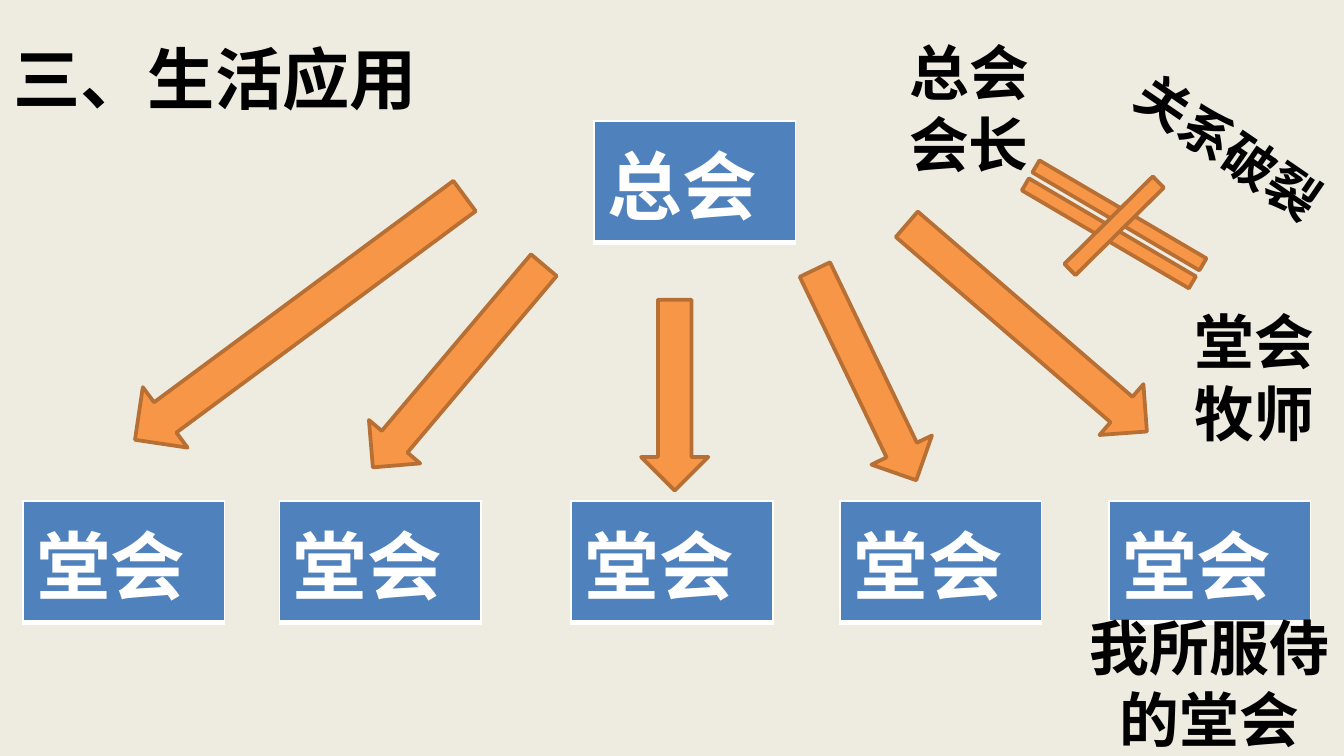
from lxml.etree import SubElement
from pptx import Presentation
from pptx.dml.color import RGBColor
from pptx.enum.shapes import MSO_SHAPE
from pptx.enum.text import MSO_ANCHOR, PP_ALIGN
from pptx.oxml.ns import qn
from pptx.util import Inches, Pt

THEME = {
    "background": RGBColor.from_string("EEECE1"),
    "text": RGBColor.from_string("000000"),
    "light": RGBColor.from_string("FFFFFF"),
    "box": RGBColor.from_string("4F81BD"),
    "arrow": RGBColor.from_string("F79646"),
    "outline": RGBColor.from_string("B76F34"),
    "title_font": "Calibri",
    "cell_font": "Arial",
    "title_size": 36,
    "cell_size": 40,
    "label_size": 32,
    "note_size": 28,
}
TITLE = "三、生活应用"
BOX_SIZE = (1.5, 0.77)
HEADQUARTERS = ("总会", 4.42, 0.9)
BRANCH_NAME, BRANCH_TOP = "堂会", 3.73
BRANCH_LEFTS = (0.17, 2.08, 4.25, 6.25, 8.25)
BORDERS = (("a:lnL", 1), ("a:lnR", 1), ("a:lnT", 1), ("a:lnB", 3))

# left, top, width, height, rotation
ARROWS = (
    (1.95, 0.84, 0.56, 3.05, 233.5),
    (3.16, 1.74, 0.5, 1.97, 220.2),
    (4.77, 2.23, 0.5, 1.42, 180),
    (6.19, 1.92, 0.5, 1.74, 154.3),
    (7.39, 1.26, 0.5, 2.36, 130.8),
)
BROKEN_LINK = (
    (MSO_SHAPE.MATH_EQUAL, (7.31, 1.45, 1.96, 0.44, 30.4)),
    (MSO_SHAPE.MATH_MINUS, (7.66, 1.43, 1.26, 0.5, 315.3)),
)
LABELS = (
    ("我所服侍的堂会", (8, 4.54, 2, 1.08, 0)),
    ("总会会长", (6.5, 0.31, 1.42, 0.98, 0)),
    ("堂会牧师", (8.67, 2.31, 1.33, 0.98, 0)),
)
NOTE = ("关系破裂", (8.19, 0.6, 1.92, 0.98, 34.4))


def write(frame, text, size, font, color, align):
    para = frame.paragraphs[0]
    para.alignment = align
    span = para.add_run()
    span.text = text
    span.font.name = font
    span.font.size = Pt(size)
    span.font.bold = True
    span.font.color.rgb = color


def add_box(page, text, left, top):
    """Add a one-cell table with white borders."""
    width, height = BOX_SIZE
    table = page.shapes.add_table(
        1, 1, Inches(left), Inches(top), Inches(width), Inches(height)).table
    cell = table.cell(0, 0)
    properties = cell._tc.get_or_add_tcPr()
    for tag, points in BORDERS:
        border = SubElement(properties, qn(tag), w=str(Pt(points)))
        fill = SubElement(border, qn("a:solidFill"))
        SubElement(fill, qn("a:srgbClr"), val=str(THEME["light"]))
    cell.fill.solid()
    cell.fill.fore_color.rgb = THEME["box"]
    write(cell.text_frame, text, THEME["cell_size"], THEME["cell_font"],
          THEME["light"], PP_ALIGN.LEFT)


def add_orange_shape(page, kind, place):
    *bounds, rotation = place
    shape = page.shapes.add_shape(kind, *map(Inches, bounds))
    shape.rotation = rotation
    shape.shadow.inherit = False
    shape.fill.solid()
    shape.fill.fore_color.rgb = THEME["arrow"]
    shape.line.color.rgb = THEME["outline"]
    shape.line.width = Pt(2)


def add_label(page, text, place, size):
    *bounds, rotation = place
    box = page.shapes.add_textbox(*map(Inches, bounds))
    box.rotation = rotation
    frame = box.text_frame
    frame.word_wrap = True
    frame.vertical_anchor = MSO_ANCHOR.MIDDLE
    write(frame, text, size, THEME["title_font"], THEME["text"],
          PP_ALIGN.CENTER)


def main():
    deck = Presentation()
    deck.slide_width = Inches(10)
    deck.slide_height = deck.slide_width * 9 // 16
    page = deck.slides.add_slide(deck.slide_layouts[5])
    page.background.fill.solid()
    page.background.fill.fore_color.rgb = THEME["background"]

    title = page.shapes.title
    title.left, title.top = Inches(0), Inches(0)
    title.width, title.height = deck.slide_width, Inches(1.15)
    title.text_frame.vertical_anchor = MSO_ANCHOR.MIDDLE
    write(title.text_frame, TITLE, THEME["title_size"], THEME["title_font"],
          THEME["text"], PP_ALIGN.LEFT)

    add_box(page, *HEADQUARTERS)
    for left in BRANCH_LEFTS:
        add_box(page, BRANCH_NAME, left, BRANCH_TOP)
    for place in ARROWS:
        add_orange_shape(page, MSO_SHAPE.UP_ARROW, place)
    for text, place in LABELS:
        add_label(page, text, place, THEME["label_size"])
    for kind, place in BROKEN_LINK:
        add_orange_shape(page, kind, place)
    add_label(page, *NOTE, THEME["note_size"])

    deck.save("out.pptx")


if __name__ == "__main__":
    main()
